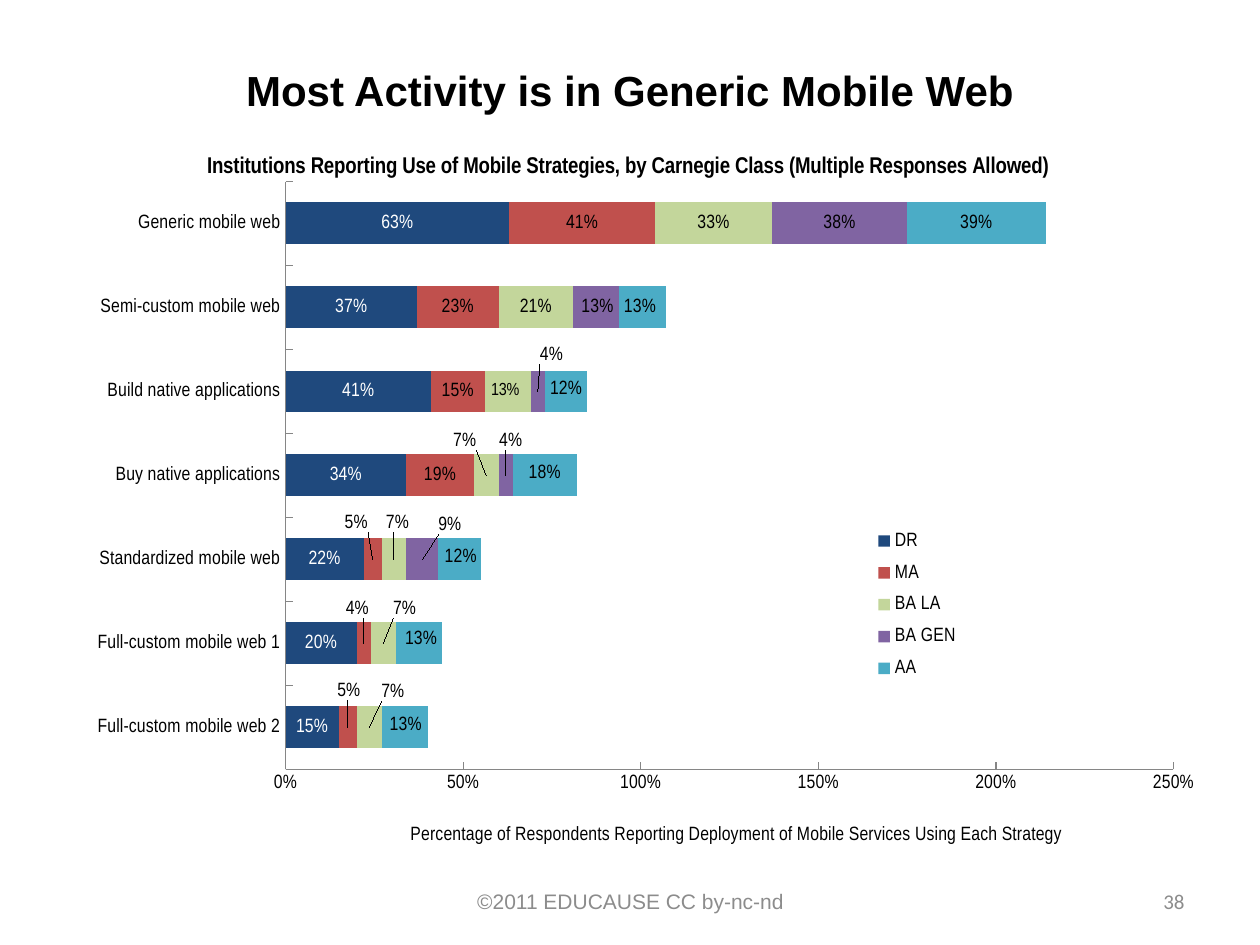
import pptx
import pptx.chart.data
import pptx.dml.color
import pptx.enum.chart
import pptx.enum.text
import pptx.oxml
import pptx.oxml.ns
import pptx.util
from pptx.util import Inches

RGBColor = pptx.dml.color.RGBColor
BLACK = RGBColor(0x00, 0x00, 0x00)
WHITE = RGBColor(0xFF, 0xFF, 0xFF)
GRAY = RGBColor(0x8C, 0x8C, 0x8C)
AXIS_GRAY = RGBColor(0x86, 0x86, 0x86)
NAVY = RGBColor(0x1F, 0x49, 0x7D)
RED = RGBColor(0xC0, 0x50, 0x4D)
GREEN = RGBColor(0xC3, 0xD6, 0x9B)
PURPLE = RGBColor(0x80, 0x64, 0xA2)
TEAL = RGBColor(0x4B, 0xAC, 0xC6)

CHART_FONT = "Arial Narrow"
CHART_WIDTH, CHART_HEIGHT = 9, 5.72
STRATEGIES = [
    "Full-custom mobile web 2", "Full-custom mobile web 1", "Standardized mobile web",
    "Buy native applications", "Build native applications", "Semi-custom mobile web",
    "Generic mobile web",
]
CARNEGIE_CLASSES = [
    ("DR", NAVY, WHITE, [0.15, 0.20, 0.22, 0.34, 0.41, 0.37, 0.63]),
    ("MA", RED, BLACK, [0.05, 0.04, 0.05, 0.19, 0.15, 0.23, 0.41]),
    ("BA LA", GREEN, BLACK, [0.07, 0.07, 0.07, 0.07, 0.13, 0.21, 0.33]),
    ("BA GEN", PURPLE, BLACK, [0, 0, 0.09, 0.04, 0.04, 0.13, 0.38]),
    ("AA", TEAL, BLACK, [0.13, 0.13, 0.12, 0.18, 0.12, 0.13, 0.39]),
]
LABEL_OFFSETS = {
    "MA": {0: (0.01, -0.29), 1: (-0.05, -0.27), 2: (-0.13, -0.29)},
    "BA LA": {0: (0.19, -0.28), 1: (0.17, -0.27), 2: (0.03, -0.29),
              3: (-0.17, -0.27), 4: (-0.02, 0)},
    "BA GEN": {2: (0.22, -0.27), 3: (0.04, -0.27), 4: (0.11, -0.29), 5: (0.01, 0)},
    "AA": {0: (0.01, -0.02), 1: (0.02, -0.03), 2: (0.01, -0.02),
           3: (0, -0.02), 4: (0, -0.02), 5: (-0.02, 0)},
}
SMALL_LABEL = ("BA LA", 4)


def format_font(font, name, size, color, bold=False):
    font.name = name
    font.size = pptx.util.Pt(size)
    font.bold = bold
    font.color.rgb = color


def add_run(paragraph, text, name, size, color, bold=False):
    run = paragraph.add_run()
    run.text = text
    format_font(run.font, name, size, color, bold)


def fill_title(slide, text):
    title = slide.shapes.title
    title.left, title.top = Inches(0.5), Inches(0.3)
    title.width, title.height = Inches(9), Inches(0.82)
    title.text_frame.vertical_anchor = pptx.enum.text.MSO_ANCHOR.MIDDLE
    paragraph = title.text_frame.paragraphs[0]
    paragraph.alignment = pptx.enum.text.PP_ALIGN.CENTER
    add_run(paragraph, text, "Arial", 24, BLACK, True)


def add_footer_text(slide, text, left, width, alignment, font_name):
    box = slide.shapes.add_textbox(Inches(left), Inches(6.95), Inches(width), Inches(0.4))
    box.text_frame.word_wrap = True
    box.text_frame.vertical_anchor = pptx.enum.text.MSO_ANCHOR.MIDDLE
    paragraph = box.text_frame.paragraphs[0]
    paragraph.alignment = alignment
    add_run(paragraph, text, font_name, 12, GRAY)


def manual_layout(inner=False, **fractions):
    target = '<c:layoutTarget val="inner"/>' if inner else ""
    modes = "".join(f'<c:{side}Mode val="edge"/>' for side in "xy") if "w" in fractions or inner else ""
    values = "".join(f'<c:{key} val="{value:.4f}"/>' for key, value in fractions.items())
    return pptx.oxml.parse_xml(
        f'<c:layout {pptx.oxml.ns.nsdecls("c")}><c:manualLayout>'
        f"{target}{modes}{values}</c:manualLayout></c:layout>"
    )


def edge_layout(x, y):
    layout = manual_layout(x=x, y=y)
    for position, side in enumerate("xy"):
        mode = pptx.oxml.parse_xml(
            f'<c:{side}Mode {pptx.oxml.ns.nsdecls("c")} val="edge"/>')
        layout[0].insert(position, mode)
    return layout


def place_after(element, predecessor_tag, layout):
    for old_layout in element.findall(pptx.oxml.ns.qn("c:layout")):
        element.remove(old_layout)
    element.find(pptx.oxml.ns.qn(predecessor_tag)).addnext(layout)


def fill_chart_title(chart_title, text, size, bold, x, y):
    paragraph = chart_title.text_frame.paragraphs[0]
    add_run(paragraph, text, CHART_FONT, size, BLACK, bold)
    place_after(chart_title._element, "c:tx", edge_layout(x, y))


def format_series(series, color, label_color):
    series.format.fill.solid()
    series.format.fill.fore_color.rgb = color
    series.invert_if_negative = False
    labels = series.data_labels
    labels.show_value = True
    labels.number_format = "0%"
    labels.number_format_is_linked = False
    format_font(labels.font, CHART_FONT, 11, label_color)
    for index, offset in LABEL_OFFSETS.get(series.name, {}).items():
        size = 10 if (series.name, index) == SMALL_LABEL else 11
        format_font(series.points[index].data_label.font, CHART_FONT, size, label_color)
        label = labels._element.xpath(f'c:dLbl[c:idx/@val="{index}"]')[0]
        layout = manual_layout(x=offset[0] / CHART_WIDTH, y=offset[1] / CHART_HEIGHT)
        place_after(label, "c:idx", layout)
    zeros = [index for index, value in enumerate(series.values) if value == 0]
    for position, index in enumerate(zeros):
        labels._element.insert(position, pptx.oxml.parse_xml(
            f'<c:dLbl {pptx.oxml.ns.nsdecls("c")}><c:idx val="{index}"/>'
            '<c:delete val="1"/></c:dLbl>'))


def format_axis(axis):
    axis.has_major_gridlines = False
    axis.major_tick_mark = pptx.enum.chart.XL_TICK_MARK.INSIDE
    axis.minor_tick_mark = pptx.enum.chart.XL_TICK_MARK.NONE
    axis.format.line.color.rgb = AXIS_GRAY
    axis.format.line.width = pptx.util.Pt(0.75)
    format_font(axis.tick_labels.font, CHART_FONT, 11, BLACK)


def add_strategy_chart(slide):
    data = pptx.chart.data.CategoryChartData(number_format="0%")
    data.categories = STRATEGIES
    for name, _, _, values in CARNEGIE_CLASSES:
        data.add_series(name, values)
    chart = slide.shapes.add_chart(
        pptx.enum.chart.XL_CHART_TYPE.BAR_STACKED, Inches(0.62), Inches(1.03),
        Inches(CHART_WIDTH), Inches(CHART_HEIGHT), data).chart
    format_font(chart.font, CHART_FONT, 11, BLACK)
    plot = chart.plots[0]
    plot.gap_width, plot.overlap = 100, 100
    plot.vary_by_categories = False
    for series, (_, color, label_color, _) in zip(plot.series, CARNEGIE_CLASSES):
        format_series(series, color, label_color)

    format_axis(chart.category_axis)
    value_axis = chart.value_axis
    format_axis(value_axis)
    value_axis.minimum_scale, value_axis.maximum_scale = 0, 2.5
    value_axis.major_unit = 0.5
    value_axis.tick_labels.number_format = "0%"
    value_axis.tick_labels.number_format_is_linked = False

    fill_chart_title(
        chart.chart_title,
        "Institutions Reporting Use of Mobile Strategies, by Carnegie Class (Multiple Responses Allowed)",
        13, True, 0.11, 0.03)
    fill_chart_title(
        value_axis.axis_title,
        "Percentage of Respondents Reporting Deployment of Mobile Services Using Each Strategy",
        11, False, 0.29, 0.96)

    chart.has_legend = True
    chart.legend.position = pptx.enum.chart.XL_LEGEND_POSITION.BOTTOM
    chart.legend.include_in_layout = False
    format_font(chart.legend.font, CHART_FONT, 11, BLACK)
    place_after(chart.legend._element, "c:legendPos",
                manual_layout(x=0.68, y=0.54, w=0.12, h=0.24))
    plot_area = chart._chartSpace.chart.plotArea
    for old_layout in plot_area.findall(pptx.oxml.ns.qn("c:layout")):
        plot_area.remove(old_layout)
    plot_area.insert(0, manual_layout(True, x=0.183, y=0.072, w=0.783, h=0.817))


def main():
    presentation = pptx.Presentation()
    presentation.slide_width, presentation.slide_height = Inches(10), Inches(7.5)
    slide = presentation.slides.add_slide(presentation.slide_layouts[5])
    add_strategy_chart(slide)
    alignment = pptx.enum.text.PP_ALIGN
    add_footer_text(slide, "©2011 EDUCAUSE CC by-nc-nd", 3.42, 3.17, alignment.CENTER, "Arial")
    add_footer_text(slide, "38", 7.17, 2.33, alignment.RIGHT, "Calibri")
    fill_title(slide, "Most Activity is in Generic Mobile Web")
    presentation.save("out.pptx")


if __name__ == "__main__":
    main()
